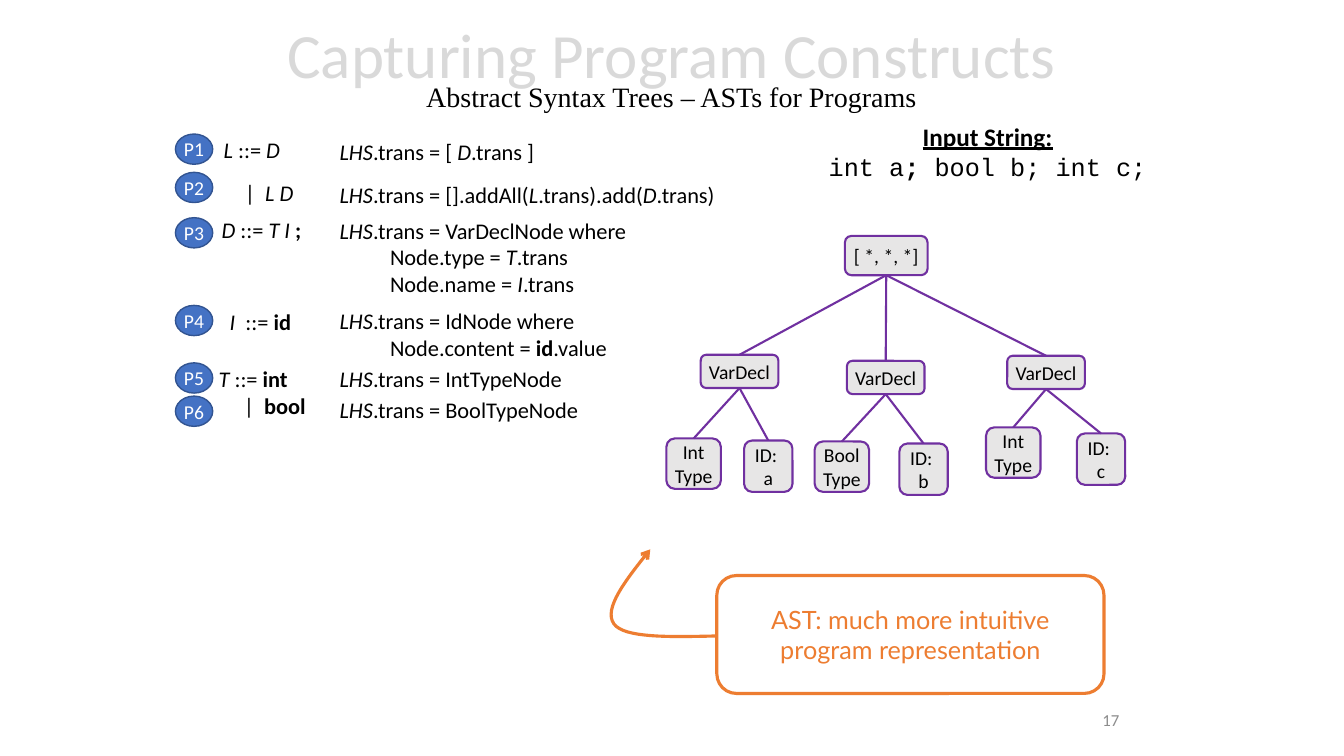
from pptx import Presentation
from pptx.dml.color import RGBColor
from pptx.enum.shapes import MSO_CONNECTOR, MSO_SHAPE
from pptx.enum.text import MSO_ANCHOR, PP_ALIGN
from pptx.oxml.ns import qn
from pptx.util import Inches, Pt
from lxml import etree


def italic(text):
    return text, {"italic": True}


def bold(text):
    return text, {"bold": True}


# --- Content ---
TITLE = "Capturing Program Constructs"
SUBTITLE = "Abstract Syntax Trees – ASTs for Programs"
PAGE = "17"
CALLOUT = "AST: much more intuitive program representation"
INPUT_LINES = [
    [("Input String:", {"bold": True, "underline": True})],
    [("int a", {"font": "Courier New"}),
     (";", {"font": "Courier New", "bold": True}),
     (" bool b; int c;", {"font": "Courier New"})],
]
LHS = italic("LHS")

# Productions and translations: box, exact line spacing, lines of (indent, runs)
RULES = [
    ((2.12, 1.21, 0.77, 0.43), 26, [(0, [italic("L"), " ::= ", italic("D")])]),
    ((2.33, 1.63, 1.55, 0.43), 26, [(0, ["|  ", italic("L D")])]),
    ((2.1, 2.1, 1.05, 0.37), None,
     [(0, [italic("D"), " ::= ", italic("T I"), bold(" ;")])]),
    ((2.18, 3.01, 1.25, 0.37), None, [(0, [italic("I  "), "::= ", bold("id")])]),
    ((2.07, 3.57, 1.7, 0.64), None,
     [(0, [italic("T "), "::= ", bold("int")]),
      (0.25, ["|  ", bold("bool")])]),
    ((3.27, 1.23, 2.16, 0.43), 26,
     [(0, [LHS, ".trans = [ ", italic("D"), ".trans ]"])]),
    ((3.27, 1.65, 3.97, 0.43), 26,
     [(0, [LHS, ".trans = [].addAll(", italic("L"), ".trans).add(",
           italic("D"), ".trans)"])]),
    ((3.27, 2.1, 3.09, 0.91), None,
     [(0, [LHS, ".trans = VarDeclNode where"]),
      (0.5, ["Node.type = ", italic("T"), ".trans"]),
      (0.5, ["Node.name = ", italic("I"), ".trans"])]),
    ((3.27, 3, 3.12, 0.64), None,
     [(0, [LHS, ".trans = IdNode where"]),
      (0.5, ["Node.content = ", bold("id"), ".value"])]),
    ((3.27, 3.57, 2.44, 0.37), None, [(0, [LHS, ".trans = IntTypeNode"])]),
    ((3.27, 3.88, 2.6, 0.37), None, [(0, [LHS, ".trans = BoolTypeNode"])]),
]
BADGE_TOPS = [1.33, 1.71, 2.16, 3.03, 3.6, 3.93]

# Tree nodes: (left, top) and lines
ROOT = ((8.38, 2.34), ["[ *, *, *]"])
DECLARATIONS = [
    ((6.95, 3.52), ((6.61, 4.35), ["Int", "Type"]), ((7.38, 4.37), ["ID: ", "a"])),
    ((8.4, 3.58), ((8.08, 4.38), ["Bool", "Type"]), ((8.92, 4.4), ["ID: ", "b"])),
    ((9.99, 3.53), ((9.78, 4.24), ["Int", "Type"]), ((10.68, 4.3), ["ID: ", "c"])),
]
ROOT_SIZE, DECL_SIZE = (0.82, 0.39), (0.77, 0.33)
TYPE_SIZE, ID_SIZE = (0.54, 0.5), (0.48, 0.51)

# Callout arrow: two cubic curves as start, control, control, end
ARROW = [
    [(7.09, 6.31), (6.64, 6.32), (6.19, 6.33), (6.09, 6.19)],
    [(6.09, 6.19), (5.98, 6.04), (6.21, 5.75), (6.45, 5.45)],
]
CURVE_STEPS = 16
PURPLE, ORANGE, GREY, BLUE = "7030A0", "ED7D31", "E7E6E6", "4472C4"

deck = Presentation()
deck.slide_width, deck.slide_height = Inches(13.33), Inches(7.5)
slide = deck.slides.add_slide(deck.slide_layouts[6])
shapes = slide.shapes


# --- Helpers ---
def color(hex_value):
    return RGBColor.from_string(hex_value)


def add_run(para, text, size, hue="000000", font="Calibri", **style):
    run = para.add_run()
    run.text = text
    run.font.size, run.font.name = Pt(size), font
    run.font.color.rgb = color(hue)
    for key, value in style.items():
        setattr(run.font, key, value)


def write(frame, lines, size, align, spacing=None, **style):
    """Lines are (indent, runs); a run is plain text or (text, style)."""
    for number, (indent, runs) in enumerate(lines):
        para = frame.paragraphs[0] if number == 0 else frame.add_paragraph()
        para.alignment = align
        if spacing:
            para.line_spacing = Pt(spacing)
        if indent:
            para._p.get_or_add_pPr().set("marL", str(Inches(indent)))
        for run in runs:
            text, own = (run, {}) if isinstance(run, str) else run
            add_run(para, text, size, **{**style, **own})


def text_box(box, anchor=MSO_ANCHOR.TOP):
    frame = shapes.add_textbox(*map(Inches, box)).text_frame
    frame.word_wrap = True
    frame.vertical_anchor = anchor
    return frame


def block(kind, box, fill, line, width, lines, size, inset=None, **style):
    shape = shapes.add_shape(kind, *map(Inches, box))
    shape.shadow.inherit = False
    shape.fill.solid()
    shape.fill.fore_color.rgb = color(fill)
    shape.line.color.rgb, shape.line.width = color(line), Pt(width)
    frame = shape.text_frame
    frame.word_wrap, frame.vertical_anchor = True, MSO_ANCHOR.MIDDLE
    if inset is not None:
        frame.margin_left = frame.margin_right = Inches(inset)
        frame.margin_top = frame.margin_bottom = 0
    write(frame, [(0, [text]) for text in lines], size, PP_ALIGN.CENTER, **style)
    return shape


def node(place, size, lines):
    return block(MSO_SHAPE.ROUNDED_RECTANGLE, place + size, GREY, PURPLE, 1.5,
                 lines, 14, inset=0.05)


def link(parent, child):
    edge = shapes.add_connector(MSO_CONNECTOR.STRAIGHT, 0, 0, 0, 0)
    edge.begin_connect(parent, 2)
    edge.end_connect(child, 0)
    edge.line.color.rgb, edge.line.width = color(PURPLE), Pt(1.5)
    etree.SubElement(edge._element.spPr, qn("a:effectLst"))


def curve_point(curve, t):
    weights = ((1 - t) ** 3, 3 * t * (1 - t) ** 2, 3 * t * t * (1 - t), t ** 3)
    return tuple(Inches(sum(w * point[axis] for w, point in zip(weights, curve)))
                 for axis in (0, 1))


# --- Title, page number and input string ---
heading = text_box((2.35, 0.01, 8.62, 1.45), MSO_ANCHOR.MIDDLE).paragraphs[0]
heading.alignment, heading.line_spacing = PP_ALIGN.CENTER, 0.7
add_run(heading, TITLE, 45, "D9D9D9")
heading.add_line_break()
add_run(heading, SUBTITLE, 20, font="Times New Roman")
write(text_box((8.87, 6.94, 2.33, 0.4), MSO_ANCHOR.MIDDLE), [(0, [PAGE])], 12,
      PP_ALIGN.RIGHT, hue="8C8C8C")
write(text_box((8.11, 1.15, 3.37, 0.71)), [(0, runs) for runs in INPUT_LINES], 18,
      PP_ALIGN.CENTER)

# --- Grammar rules and their badges ---
for box, spacing, lines in RULES:
    write(text_box(box), lines, 16, PP_ALIGN.LEFT, spacing)
for number, top in enumerate(BADGE_TOPS, 1):
    block(MSO_SHAPE.OVAL, (1.74, top, 0.37, 0.3), BLUE, "325491", 1,
          [f"P{number}"], 14, inset=0, hue="FFFFFF")

# --- Syntax tree ---
root = node(ROOT[0], ROOT_SIZE, ROOT[1])
for place, (type_place, type_lines), (id_place, id_lines) in DECLARATIONS:
    declaration = node(place, DECL_SIZE, ["VarDecl"])
    link(root, declaration)
    link(declaration, node(type_place, TYPE_SIZE, type_lines))
    link(declaration, node(id_place, ID_SIZE, id_lines))

# --- Callout and its arrow ---
block(MSO_SHAPE.ROUNDED_RECTANGLE, (7.11, 5.71, 3.84, 1.17), "FFFFFF", ORANGE, 2.25,
      [CALLOUT], 18, hue=ORANGE, font="Lato")
points = [curve_point(curve, step / CURVE_STEPS)
          for curve in ARROW for step in range(1, CURVE_STEPS + 1)]
builder = shapes.build_freeform(*curve_point(ARROW[0], 0))
builder.add_line_segments(points, close=False)
arrow = builder.convert_to_shape()
arrow.shadow.inherit = False
arrow.fill.background()
arrow.line.color.rgb, arrow.line.width = color(ORANGE), Pt(2.25)
etree.SubElement(arrow.line._get_or_add_ln(), qn("a:tailEnd"), type="arrow")

deck.save("out.pptx")
